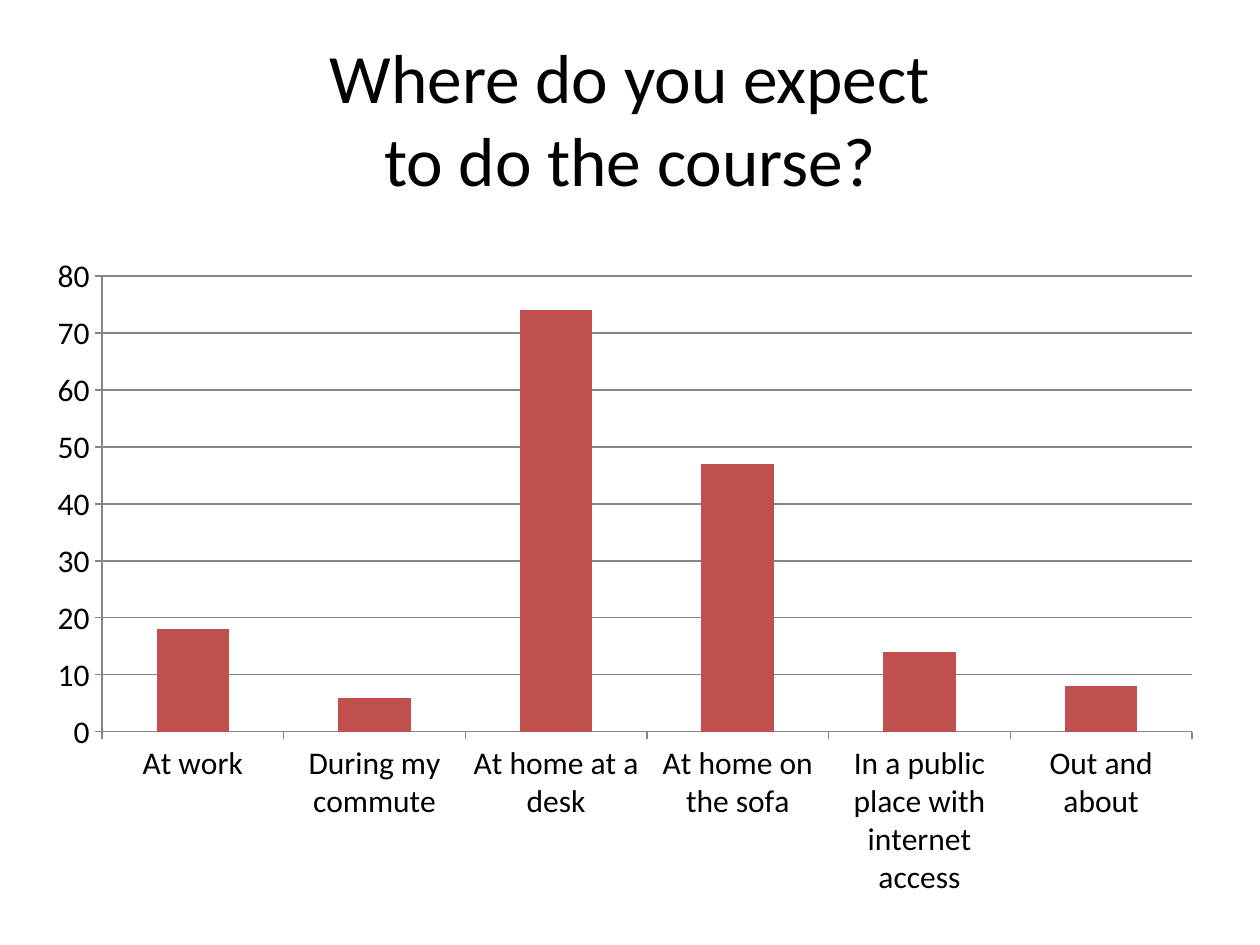
from lxml.etree import SubElement
from pptx import Presentation
from pptx.chart.data import CategoryChartData
from pptx.dml.color import RGBColor
from pptx.enum.chart import XL_CHART_TYPE as ChartType, XL_TICK_MARK as Tick
from pptx.enum.text import MSO_ANCHOR as Anchor, PP_ALIGN as Align
from pptx.oxml.ns import qn
from pptx.util import Pt

# Content
TITLE = "Where do you expect\vto do the course?"
ANSWERS = [
    ("At work", 18),
    ("During my commute", 6),
    ("At home at a desk", 74),
    ("At home on the sofa", 47),
    ("In a public place with internet access", 14),
    ("Out and about", 8),
]

# Theme and layout in px (126 to the inch)
THEME = {
    "font": "Calibri", "title": 39.6, "label": 18,
    "text": RGBColor(0, 0, 0),
    "bar": RGBColor(0xC0, 0x50, 0x4D),
    "line": RGBColor(0x86, 0x86, 0x86),
}
PX = 914400 // 126
SLIDE = (1260, 945)
TITLE_BOX = (63, 38, 1134, 158)
CHART_BOX = (35, 244, 1181, 665)
PLOT_BOX = (102, 276, 1090, 456)


def emu(box):
    return [v * PX for v in box]


def apply(obj, values):
    for name, value in values.items():
        setattr(obj, name, value)


def style_font(font, size):
    apply(font, {"name": THEME["font"], "size": Pt(size), "bold": False})
    font.color.rgb = THEME["text"]


def style_line(line):
    line.color.rgb = THEME["line"]
    line.width = Pt(0.75)


def place_plot(chart):
    """Fix the inner plot area as fractions of the chart frame."""
    left, top, width, height = CHART_BOX
    x, y, w, h = PLOT_BOX
    plot_area = chart.plots[0]._element.getparent()
    layout = plot_area.find(qn("c:layout"))
    if layout is None:
        layout = SubElement(plot_area, qn("c:layout"))
        plot_area.insert(0, layout)
    manual = SubElement(layout, qn("c:manualLayout"))
    parts = {
        "layoutTarget": "inner", "xMode": "edge", "yMode": "edge",
        "x": (x - left) / width, "y": (y - top) / height,
        "w": w / width, "h": h / height,
    }
    for tag, value in parts.items():
        SubElement(manual, qn(f"c:{tag}")).set("val", str(value))


def add_title(s):
    tf = s.shapes.add_textbox(*emu(TITLE_BOX)).text_frame
    apply(tf, {"word_wrap": True, "vertical_anchor": Anchor.MIDDLE})
    p = tf.paragraphs[0]
    p.text = TITLE
    p.alignment = Align.CENTER
    for r in p.runs:
        style_font(r.font, THEME["title"])


def add_answers_chart(s):
    data = CategoryChartData(number_format="0")
    data.categories = [answer for answer, _ in ANSWERS]
    data.add_series("Series 1", [value for _, value in ANSWERS])
    frame = s.shapes.add_chart(ChartType.COLUMN_STACKED, *emu(CHART_BOX), data)
    chart = frame.chart
    apply(chart, {"has_legend": False, "has_title": False})
    style_font(chart.font, THEME["label"])

    # Bars
    plot = chart.plots[0]
    apply(plot, {"gap_width": 150, "overlap": 100, "vary_by_categories": False})
    fill = plot.series[0].format.fill
    fill.solid()
    fill.fore_color.rgb = THEME["bar"]

    # Axes
    for axis in (chart.category_axis, chart.value_axis):
        apply(axis, {"major_tick_mark": Tick.OUTSIDE, "minor_tick_mark": Tick.NONE})
        style_line(axis.format.line)
    values = chart.value_axis
    apply(values, {"minimum_scale": 0, "maximum_scale": 80, "major_unit": 10,
                   "has_major_gridlines": True})
    style_line(values.major_gridlines.format.line)
    apply(values.tick_labels, {"number_format": "0", "number_format_is_linked": False})
    place_plot(chart)


def main():
    prs = Presentation()
    prs.slide_width, prs.slide_height = emu(SLIDE)
    s = prs.slides.add_slide(prs.slide_layouts[6])
    add_title(s)
    add_answers_chart(s)
    prs.save("out.pptx")


if __name__ == "__main__":
    main()
